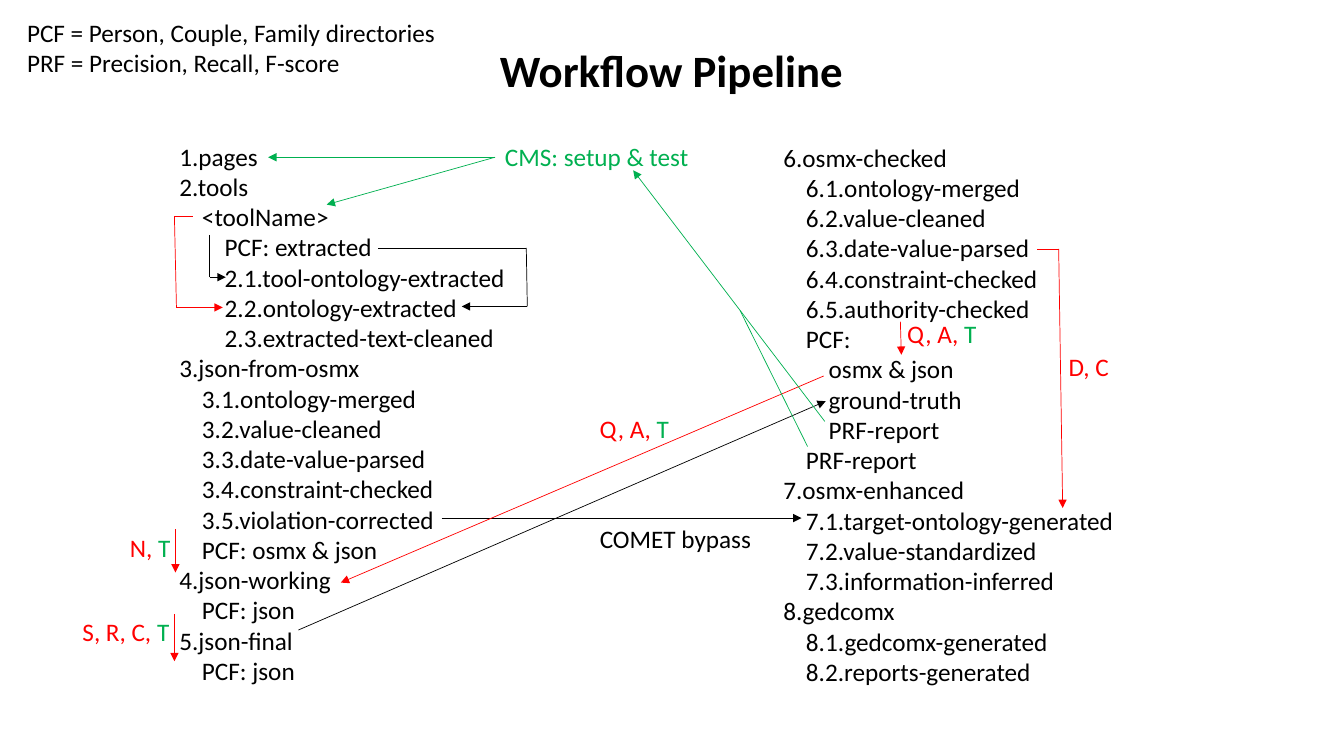
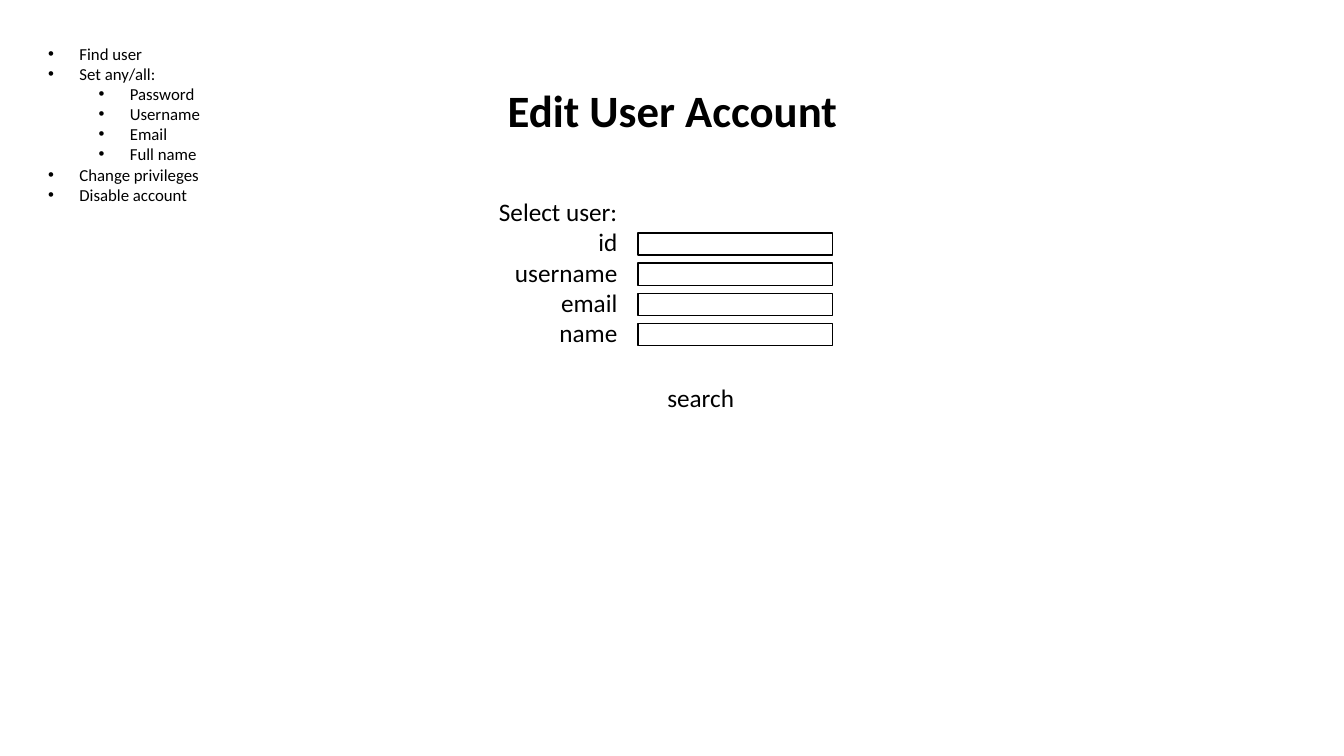
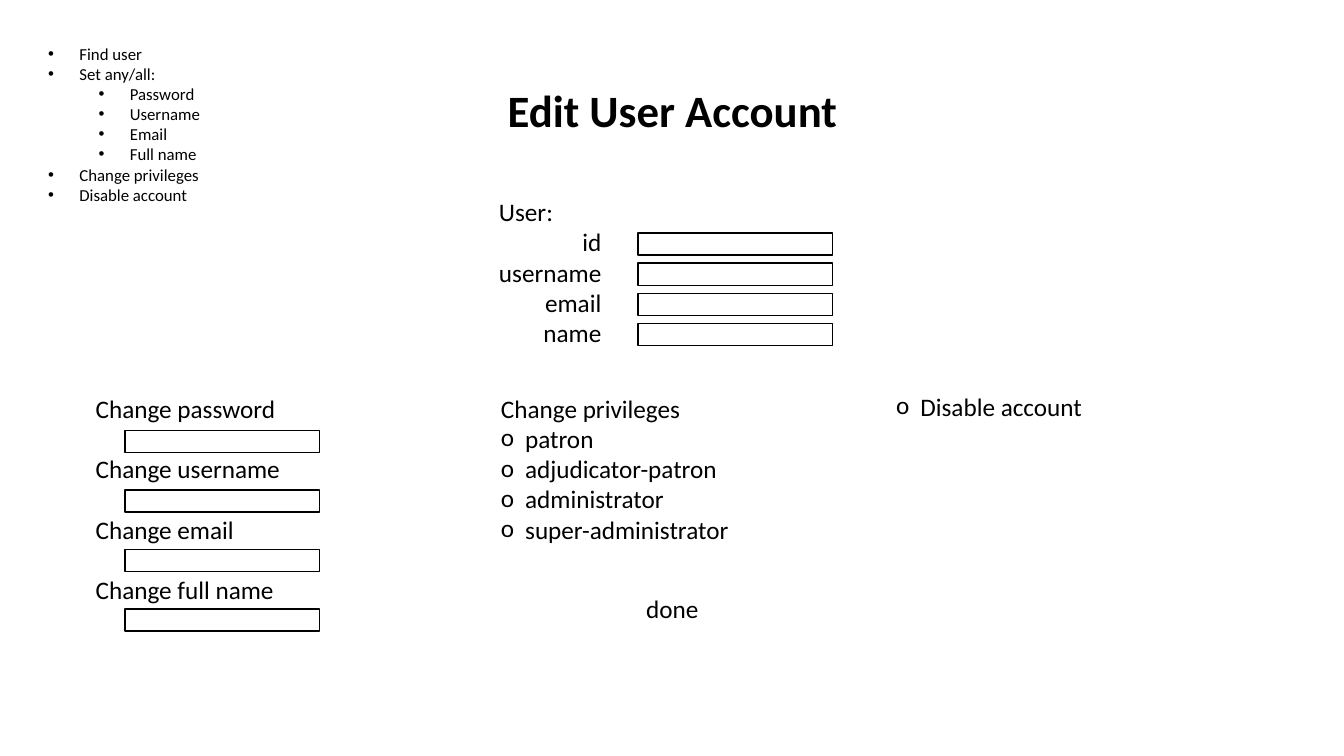
from lxml import etree
from pptx import Presentation
from pptx import util as u
from pptx.dml.color import RGBColor
from pptx.enum import shapes, text
from pptx.oxml import ns

BLACK = RGBColor(0x00, 0x00, 0x00)
RED = RGBColor(0xFF, 0x00, 0x00)
GREEN = RGBColor(0x00, 0xB0, 0x50)
FONT = "Calibri"
OUTLINE_INDENT = 0.225
LINE_HEIGHT = 21.6

LEFT_OUTLINE = [
    (0, "1.pages"),
    (0, "2.tools"),
    (1, "<toolName>"),
    (2, "PCF: extracted"),
    (2, "2.1.tool-ontology-extracted"),
    (2, "2.2.ontology-extracted"),
    (2, "2.3.extracted-text-cleaned"),
    (0, "3.json-from-osmx"),
    (1, "3.1.ontology-merged"),
    (1, "3.2.value-cleaned"),
    (1, "3.3.date-value-parsed"),
    (1, "3.4.constraint-checked"),
    (1, "3.5.violation-corrected"),
    (1, "PCF: osmx & json"),
    (0, "4.json-working"),
    (1, "PCF: json"),
    (0, "5.json-final"),
    (1, "PCF: json"),
]
RIGHT_OUTLINE = [
    (0, "6.osmx-checked"),
    (1, "6.1.ontology-merged"),
    (1, "6.2.value-cleaned"),
    (1, "6.3.date-value-parsed"),
    (1, "6.4.constraint-checked"),
    (1, "6.5.authority-checked"),
    (1, "PCF:"),
    (2, "osmx & json"),
    (2, "ground-truth"),
    (2, "PRF-report"),
    (1, "PRF-report"),
    (0, "7.osmx-enhanced"),
    (1, "7.1.target-ontology-generated"),
    (1, "7.2.value-standardized"),
    (1, "7.3.information-inferred"),
    (0, "8.gedcomx"),
    (1, "8.1.gedcomx-generated"),
    (1, "8.2.reports-generated"),
]
TASKS = [
    (0, "Find user"),
    (0, "Set any/all:"),
    (1, "Password"),
    (1, "Username"),
    (1, "Email"),
    (1, "Full name"),
    (0, "Change privileges"),
    (0, "Disable account"),
]
ROLES = ["patron", "adjudicator-patron", "administrator", "super-administrator"]


class Deck:
    def __init__(self):
        self.presentation = Presentation()
        self.presentation.slide_width = u.Inches(13.33)
        self.presentation.slide_height = u.Inches(7.5)
        self.slide = None

    def new_slide(self, title, left, top):
        layout = self.presentation.slide_layouts[6]
        self.slide = self.presentation.slides.add_slide(layout)
        shape = self.text([title], left, top, 11.5, 1.45, size=32)
        frame = shape.text_frame
        frame.auto_size = text.MSO_AUTO_SIZE.NONE
        frame.word_wrap = True
        frame.vertical_anchor = text.MSO_ANCHOR.MIDDLE
        paragraph = frame.paragraphs[0]
        paragraph.alignment = text.PP_ALIGN.CENTER
        paragraph.line_spacing = 0.9
        paragraph.runs[0].font.bold = True

    def style(self, run, color, size=18):
        run.font.name = FONT
        run.font.size = u.Pt(size)
        run.font.color.rgb = color

    def text(self, lines, left, top, width, height=0.4, color=BLACK, size=18):
        shape = self.slide.shapes.add_textbox(
            u.Inches(left), u.Inches(top), u.Inches(width), u.Inches(height))
        frame = shape.text_frame
        frame.text = "\n".join(lines)
        frame.word_wrap = False
        frame.auto_size = text.MSO_AUTO_SIZE.SHAPE_TO_FIT_TEXT
        for paragraph in frame.paragraphs:
            for run in paragraph.runs:
                self.style(run, color, size)
        return shape

    def tag(self, letters, left, top, width):
        shape = self.text([letters + ", "], left, top, width, color=RED)
        run = shape.text_frame.paragraphs[0].add_run()
        run.text = "T"
        self.style(run, GREEN)

    def indent(self, paragraph, margin, hanging=0, bullet=None, bullet_font=FONT):
        properties = paragraph._p.get_or_add_pPr()
        properties.set("marL", str(u.Inches(margin)))
        properties.set("indent", str(-u.Inches(hanging)))
        if bullet:
            font = etree.SubElement(properties, ns.qn("a:buFont"))
            font.set("typeface", bullet_font)
            etree.SubElement(properties, ns.qn("a:buChar")).set("char", bullet)

    def outline(self, entries, left, top, width):
        shape = self.text([line for _, line in entries], left, top, width, 5.55)
        for (level, _), paragraph in zip(entries, shape.text_frame.paragraphs):
            self.indent(paragraph, level * OUTLINE_INDENT)

    def task_list(self):
        shape = self.text([line for _, line in TASKS], 0.38, 0.38, 1.73, 1.72, size=12)
        for (level, _), paragraph in zip(TASKS, shape.text_frame.paragraphs):
            paragraph.level = level
            self.indent(paragraph, 0.31 + 0.5 * level, 0.31, "•", "Arial")

    def options(self, lines, left, top, width, height, first=0):
        shape = self.text(lines, left, top, width, height)
        for paragraph in shape.text_frame.paragraphs[first:]:
            self.indent(paragraph, 0.24, 0.24, "o")

    def route(self, points, color, arrow=True):
        for start, end in zip(points, points[1:]):
            connector = self.slide.shapes.add_connector(
                shapes.MSO_CONNECTOR.STRAIGHT, *map(u.Inches, start + end))
            connector.line.color.rgb = color
            connector.line.width = u.Pt(0.5)
            if arrow and end == points[-1]:
                line = connector.line._get_or_add_ln()
                etree.SubElement(line, ns.qn("a:tailEnd")).set("type", "triangle")
            etree.SubElement(connector._element.spPr, ns.qn("a:effectLst"))

    def fields(self, left, top, pitch):
        for row in range(4):
            shape = self.slide.shapes.add_shape(
                shapes.MSO_SHAPE.RECTANGLE, u.Inches(left),
                u.Inches(top + row * pitch), u.Inches(1.93), u.Inches(0.22))
            shape.shadow.inherit = False
            shape.fill.background()
            shape.line.color.rgb = BLACK
            shape.line.width = u.Pt(1)

    def user_form(self, heading):
        shape = self.text([heading, "id", "username", "email", "name"],
                          4.85, 1.9, 1.45, 1.62)
        for paragraph in shape.text_frame.paragraphs[1:]:
            paragraph.alignment = text.PP_ALIGN.RIGHT
        self.fields(6.33, 2.31, 0.3)


def workflow(deck):
    deck.new_slide("Workflow Pipeline", 0.91, 0)
    deck.text(["PCF = Person, Couple, Family directories",
               "PRF = Precision, Recall, F-score"], 0.17, 0.12, 4.3, 0.71)
    deck.outline(LEFT_OUTLINE, 1.68, 1.35, 3.47)
    deck.outline(RIGHT_OUTLINE, 7.67, 1.36, 3.52)

    deck.text(["CMS: setup & test"], 4.91, 1.35, 2.04, color=GREEN)
    deck.text(["COMET bypass"], 5.85, 5.14, 1.72)
    deck.text(["D, C"], 10.5, 3.44, 0.61, color=RED)
    for letters, left, top, width in [
        ("Q, A", 5.85, 4.05, 0.9),
        ("Q, A", 8.9, 3.11, 0.9),
        ("N", 1.19, 5.23, 0.61),
        ("S, R, C", 0.72, 6.07, 1.07),
    ]:
        deck.tag(letters, left, top, width)

    for color, points in [
        (BLACK, [(4.38, 5.14), (7.95, 5.14)]),
        (BLACK, [(2.96, 6.25), (8.19, 3.98)]),
        (BLACK, [(2.08, 2.33), (2.08, 2.75), (2.24, 2.75)]),
        (BLACK, [(3.75, 2.46), (5.22, 2.46), (5.23, 3.04), (4.58, 3.04)]),
        (RED, [(8.17, 3.73), (3.38, 5.78)]),
        (RED, [(8.93, 3.19), (8.94, 3.52)]),
        (RED, [(10.29, 2.47), (10.5, 2.47), (10.54, 5.04)]),
        (RED, [(1.91, 2.15), (1.73, 2.15), (1.75, 3.05), (2.21, 3.05)]),
        (RED, [(1.74, 5.25), (1.74, 5.68)]),
        (RED, [(1.73, 6.09), (1.73, 6.56)]),
        (GREEN, [(4.91, 1.56), (3.24, 2.03)]),
        (GREEN, [(4.91, 1.56), (2.66, 1.56)]),
        (GREEN, [(8.18, 4.18), (6.28, 1.69)]),
    ]:
        deck.route(points, color)
    deck.route([(8.01, 4.43), (7.34, 3.08)], GREEN, arrow=False)


def edit_account(deck, heading):
    deck.new_slide("Edit User Account", 0.92, 0.4)
    deck.user_form(heading)
    deck.task_list()


def find_user(deck):
    edit_account(deck, "Select user:")
    deck.text(["search"], 6.52, 3.74, 0.87)


def change_user(deck):
    edit_account(deck, "User:")
    deck.options(["Change privileges"] + ROLES, 4.87, 3.85, 2.49, 1.62, first=1)
    deck.options(["Disable account"], 8.79, 3.83, 2.07, 0.4)
    deck.text(["done"], 6.31, 5.84, 0.73)
    changes = ["Change " + item for item in ("password", "username", "email", "full name")]
    shape = deck.text(changes, 0.85, 3.85, 2.05, 2.22)
    for paragraph in shape.text_frame.paragraphs[1:]:
        paragraph.space_before = u.Pt(LINE_HEIGHT)
    deck.fields(1.24, 4.27, 0.59)


def main():
    deck = Deck()
    workflow(deck)
    find_user(deck)
    change_user(deck)
    deck.presentation.save("out.pptx")


if __name__ == "__main__":
    main()
